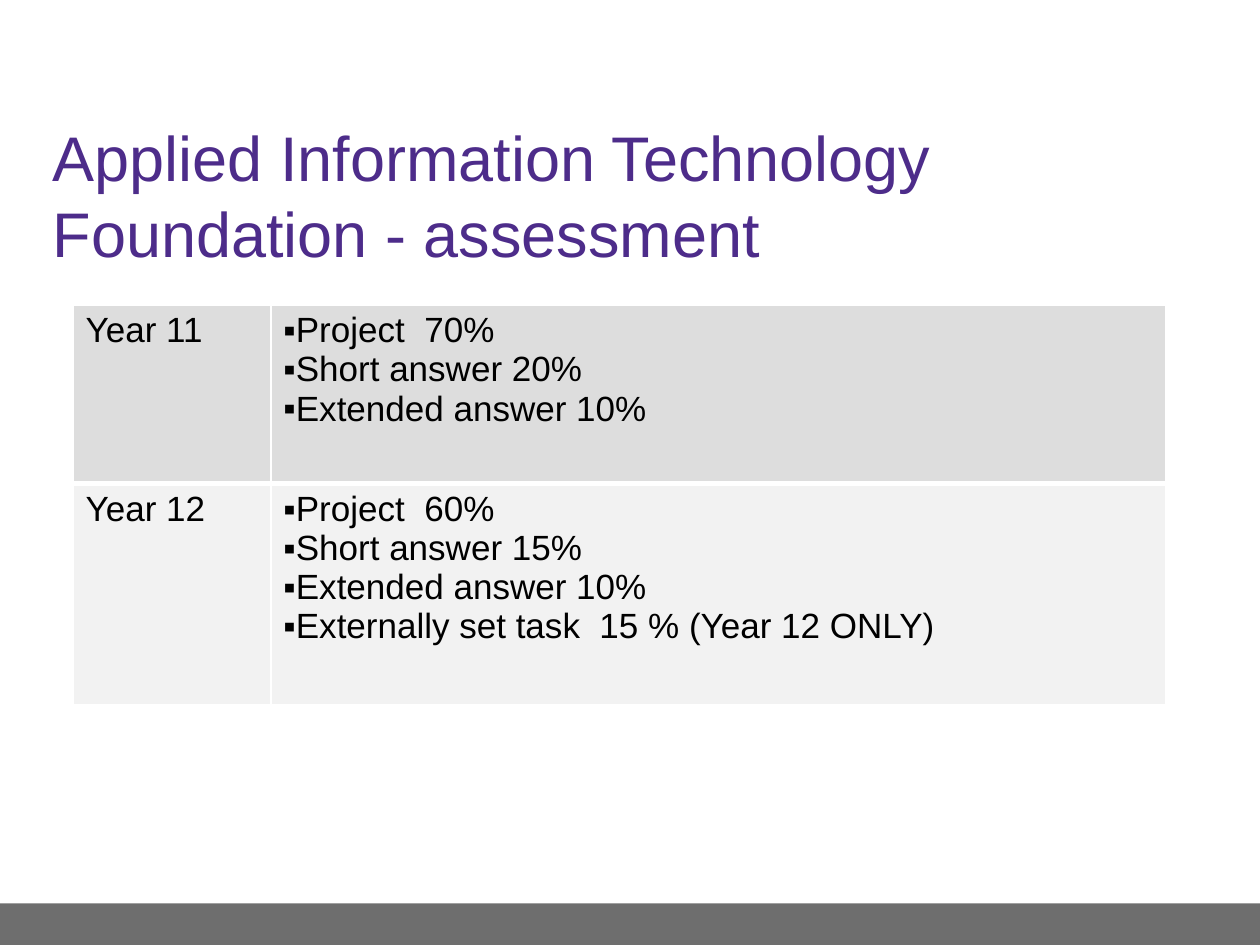
from dataclasses import dataclass

from lxml import etree
from pptx import Presentation
from pptx import util as u
from pptx.dml.color import RGBColor
from pptx.enum import shapes, text
from pptx.oxml.ns import qn


@dataclass(frozen=True)
class Theme:
    font: str = "Arial"
    title: str = "4D2C8A"
    body: str = "000000"
    footer: str = "6E6E6E"
    border: str = "FFFFFF"
    title_size: int = 36
    body_size: int = 20
    thin: int = 1
    thick: int = 3


@dataclass(frozen=True)
class YearRow:
    year: str
    tasks: tuple[str, ...]
    height: float
    fill: str
    top: int
    bottom: int


THEME = Theme()
WIDTH, HEIGHT = 10, 7.5
FOOTER_SHARE = 0.044
COLUMNS = (1.57, 7.1)
YEARS = (
    YearRow("Year 11", ("Project  70%", "Short answer 20%", "Extended answer 10%"),
            1.42, "DDDDDD", THEME.thin, THEME.thick),
    YearRow("Year 12", ("Project  60%", "Short answer 15%", "Extended answer 10%",
                        "Externally set task  15 % (Year 12 ONLY)"),
            1.75, "F2F2F2", THEME.thick, THEME.thin),
)


def set_font(paragraph, size: int, color: str) -> None:
    for name, value in {"name": THEME.font, "size": u.Pt(size), "bold": False}.items():
        setattr(paragraph.font, name, value)
    paragraph.font.color.rgb = RGBColor.from_string(color)


def paint(fill, color: str) -> None:
    fill.solid()
    fill.fore_color.rgb = RGBColor.from_string(color)


def add_bullet(paragraph) -> None:
    properties = paragraph._p.get_or_add_pPr()
    for name, value in {"marL": 0, "indent": u.Inches(-0.49)}.items():
        properties.set(name, str(value))
    etree.SubElement(properties, qn("a:buFont"), typeface=THEME.font)
    etree.SubElement(properties, qn("a:buChar"), char="▪")
    tabs = etree.SubElement(properties, qn("a:tabLst"))
    etree.SubElement(tabs, qn("a:tab"), pos=str(u.Inches(5.59)), algn="l")


def add_borders(cell, row: YearRow) -> None:
    properties = cell._tc.get_or_add_tcPr()
    widths = {"lnL": THEME.thin, "lnR": THEME.thin, "lnT": row.top, "lnB": row.bottom}
    for side, width in widths.items():
        line = etree.SubElement(properties, qn(f"a:{side}"), w=str(u.Pt(width)))
        solid = etree.SubElement(line, qn("a:solidFill"))
        etree.SubElement(solid, qn("a:srgbClr"), val=THEME.border)


def fill_cell(cell, row: YearRow, lines: tuple[str, ...], bulleted: bool) -> None:
    add_borders(cell, row)
    paint(cell.fill, row.fill)
    cell.text = "\n".join(lines)
    for paragraph in cell.text_frame.paragraphs:
        if bulleted:
            add_bullet(paragraph)
        set_font(paragraph, THEME.body_size, THEME.body)


def add_footer(slide) -> None:
    height = HEIGHT * FOOTER_SHARE
    footer = slide.shapes.add_shape(
        shapes.MSO_SHAPE.RECTANGLE, 0, u.Inches(HEIGHT - height),
        u.Inches(WIDTH), u.Inches(height))
    footer.shadow.inherit = False
    paint(footer.fill, THEME.footer)
    footer.line.fill.background()


def add_title(slide, wording: str) -> None:
    box = slide.shapes.add_textbox(*map(u.Inches, (0.32, 1.08, 9.35, 0.92)))
    frame = box.text_frame
    settings = {"word_wrap": True, "vertical_anchor": text.MSO_ANCHOR.MIDDLE, "text": wording}
    for name, value in settings.items():
        setattr(frame, name, value)
    set_font(frame.paragraphs[0], THEME.title_size, THEME.title)


def add_assessment_table(slide) -> None:
    height = sum(row.height for row in YEARS)
    table = slide.shapes.add_table(
        len(YEARS), len(COLUMNS),
        *map(u.Inches, (0.58, 2.42, sum(COLUMNS), height))).table
    for option in ("first_row", "horz_banding"):
        setattr(table, option, False)
    for column, width in zip(table.columns, COLUMNS):
        column.width = u.Inches(width)
    for table_row, row in zip(table.rows, YEARS):
        table_row.height = u.Inches(row.height)
        year_cell, tasks_cell = table_row.cells
        fill_cell(year_cell, row, (row.year,), False)
        fill_cell(tasks_cell, row, row.tasks, True)


def main() -> None:
    deck = Presentation()
    deck.slide_width, deck.slide_height = u.Inches(WIDTH), u.Inches(HEIGHT)
    slide = deck.slides.add_slide(deck.slide_layouts[6])
    add_footer(slide)
    add_title(slide, "Applied Information Technology Foundation - assessment")
    add_assessment_table(slide)
    deck.save("out.pptx")


if __name__ == "__main__":
    main()
